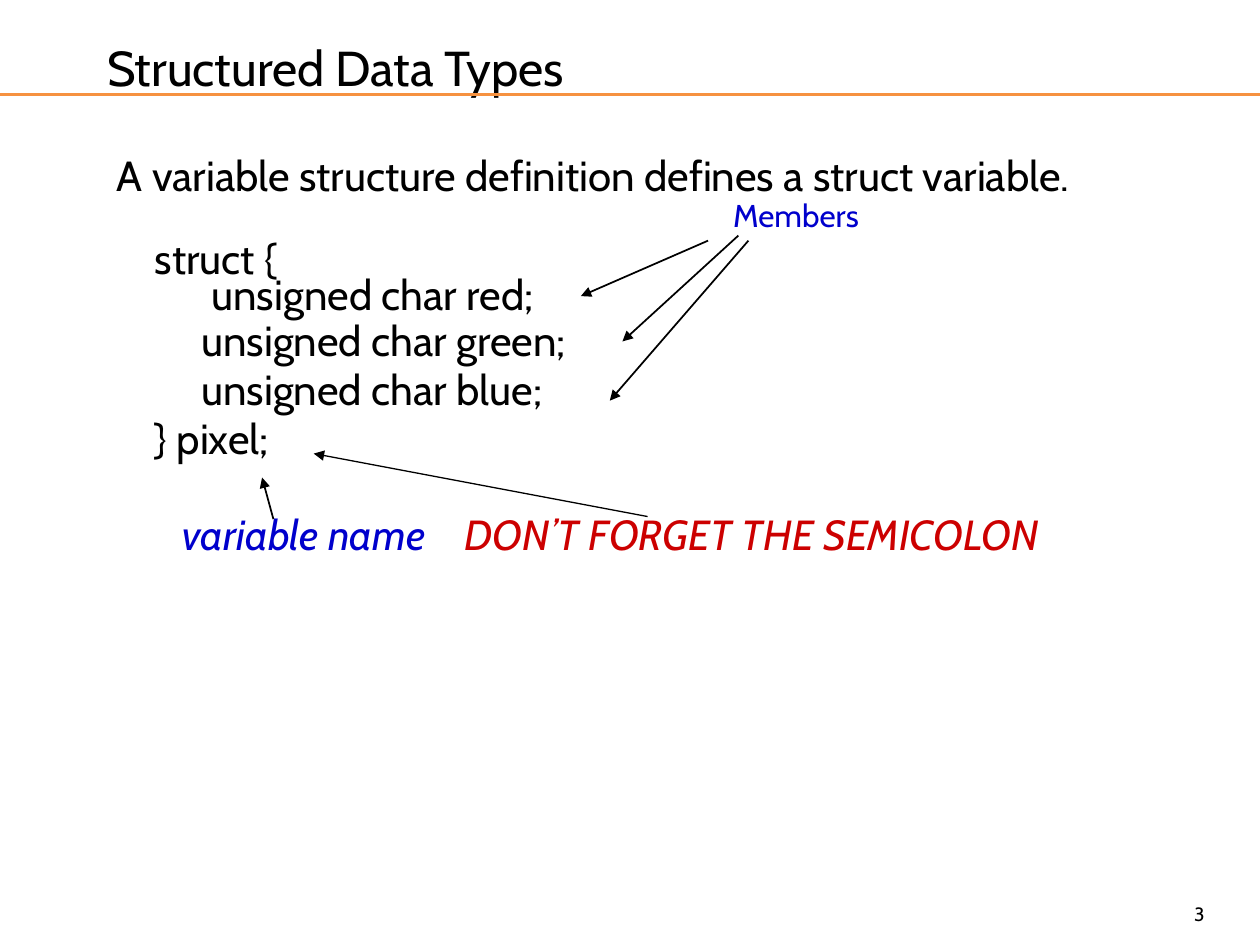
from lxml import etree
from pptx import Presentation
from pptx.dml.color import RGBColor
from pptx.enum.shapes import MSO_CONNECTOR
from pptx.enum.text import MSO_ANCHOR, PP_ALIGN
from pptx.oxml.ns import qn
from pptx.util import Inches, Pt

BLACK = RGBColor(0x00, 0x00, 0x00)
BLUE = RGBColor(0x00, 0x00, 0xCC)
RED = RGBColor(0xCC, 0x00, 0x00)
ORANGE = RGBColor(0xF6, 0x92, 0x40)


def add_run(paragraph, text, size, color=BLACK, italic=False):
    run = paragraph.add_run()
    run.text = text
    run.font.name = "Cabin"
    run.font.size = Pt(size)
    run.font.color.rgb = color
    run.font.italic = italic


def add_line(start, end, color, width):
    line = slide.shapes.add_connector(
        MSO_CONNECTOR.STRAIGHT, *(Inches(value) for value in start + end))
    line.line.color.rgb = color
    line.line.width = Pt(width)
    etree.SubElement(line._element.spPr, qn("a:effectLst"))
    return line


presentation = Presentation()
presentation.slide_width = Inches(10)
presentation.slide_height = Inches(7.5)
slide = presentation.slides.add_slide(presentation.slide_layouts[5])

title = slide.shapes.title
title.left, title.top = Inches(0.75), Inches(0.25)
title.width, title.height = Inches(8.67), Inches(0.58)
title.text_frame.vertical_anchor = MSO_ANCHOR.TOP
title_paragraph = title.text_frame.paragraphs[0]
title_paragraph.alignment = PP_ALIGN.LEFT
add_run(title_paragraph, "Structured Data Types", 28)

body = slide.shapes.add_textbox(Inches(0.83), Inches(1.08), Inches(8.83), Inches(5.67))
body.text_frame.word_wrap = True
body_lines = [
    ("A variable structure definition defines a struct variable.", 0, 33, 0),
    ("struct {", 0.3, 20, 27.4),
    ("unsigned char red;", 0.75, 20, 0.6),
    ("unsigned char green;", 0.67, 20, 6.3),
    ("unsigned char blue;", 0.67, 20, 8),
    ("} pixel;", 0.3, 20, 8),
]
for index, (text, indent, line_height, space_before) in enumerate(body_lines):
    frame = body.text_frame
    paragraph = frame.add_paragraph() if index else frame.paragraphs[0]
    paragraph.line_spacing = Pt(line_height)
    paragraph.space_before = Pt(space_before)
    paragraph._p.get_or_add_pPr().set("marL", str(Inches(indent)))
    add_run(paragraph, text, 24)

labels = [
    ("Members", 5.72, 1.51, 1.22, 0.4, 18, BLUE, False),
    ("variable name", 1.35, 3.99, 2.15, 0.5, 24, BLUE, True),
    ("DON’T FORGET THE SEMICOLON", 3.59, 3.99, 4.8, 0.5, 24, RED, True),
]
for text, left, top, width, height, size, color, italic in labels:
    label = slide.shapes.add_textbox(
        Inches(left), Inches(top), Inches(width), Inches(height))
    label.text_frame.word_wrap = False
    add_run(label.text_frame.paragraphs[0], text, size, color, italic)

arrows = [
    ((4.61, 2.35), (5.62, 1.91), 1),
    ((4.94, 2.71), (5.86, 1.87), 1),
    ((4.84, 3.18), (5.94, 1.91), 1),
    ((2.08, 3.79), (2.17, 4.12), 1),
    ((2.49, 3.6), (5.14, 4.1), 0.75),
]
for tip, tail, width in arrows:
    arrow = add_line(tip, tail, BLACK, width)
    etree.SubElement(arrow.line._get_or_add_ln(), qn("a:headEnd"), type="triangle")

add_line((0, 0.75), (10, 0.75), ORANGE, 1.75)

number = slide.shapes.add_textbox(Inches(7.58), Inches(7), Inches(2.08), Inches(0.5))
number.text_frame.word_wrap = True
number.text_frame.vertical_anchor = MSO_ANCHOR.MIDDLE
number_paragraph = number.text_frame.paragraphs[0]
number_paragraph.alignment = PP_ALIGN.RIGHT
add_run(number_paragraph, "3", 11)

presentation.save("out.pptx")
